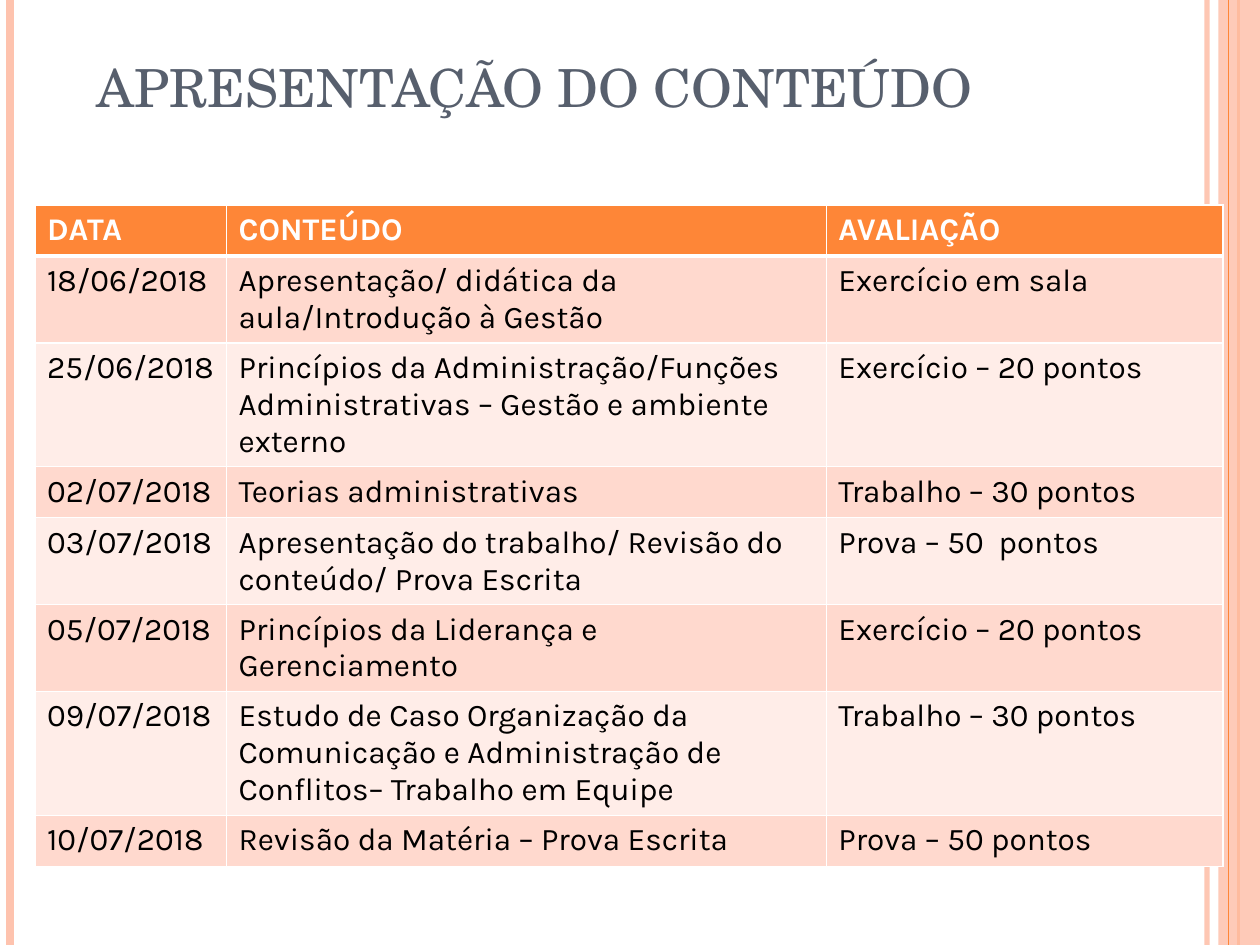
from lxml.etree import SubElement
from pptx import Presentation
from pptx.dml.color import RGBColor
from pptx.enum.shapes import MSO_CONNECTOR, MSO_SHAPE
from pptx.enum.text import MSO_ANCHOR, MSO_AUTO_SIZE, PP_ALIGN
from pptx.oxml import parse_xml
from pptx.oxml.ns import nsdecls, qn
from pptx.util import Cm, Pt

COLORS = {
    "orange": "FE8637", "peach": "FEC3AE", "slate": "575F6D",
    "band": "FFD9CE", "light": "FFEDE8", "white": "FFFFFF", "black": "000000",
}
HEADER = ("DATA", "CONTEÚDO", "AVALIAÇÃO")
LESSONS = [
    ("18/06/2018", "Apresentação/ didática da aula/Introdução à Gestão", "Exercício em sala"),
    ("25/06/2018", "Princípios da Administração/Funções Administrativas – Gestão e ambiente externo",
     "Exercício – 20 pontos"),
    ("02/07/2018", "Teorias administrativas", "Trabalho – 30 pontos"),
    ("03/07/2018", "Apresentação do trabalho/ Revisão do conteúdo/ Prova Escrita", "Prova – 50  pontos"),
    ("05/07/2018", "Princípios da Liderança e Gerenciamento", "Exercício – 20 pontos"),
    ("09/07/2018", "Estudo de Caso Organização da Comunicação e Administração de Conflitos– Trabalho em Equipe",
     "Trabalho – 30 pontos"),
    ("10/07/2018", "Revisão da Matéria – Prova Escrita", "Prova – 50 pontos"),
]


def rgb(name):
    """Return the named palette colour."""
    return RGBColor.from_string(COLORS[name])


def set_alpha(sp, percent):
    """Make the first solid colour of a shape translucent."""
    color = next(sp._element.spPr.iter(qn("a:srgbClr")))
    SubElement(color, qn("a:alpha"), val=str(percent * 1000))


def style_font(p, name, size, color, bold=False):
    """Set the font of a paragraph."""
    p.font.name, p.font.size, p.font.bold = name, Pt(size), bold
    p.font.color.rgb = rgb(color)


def add_rule(s, x, height, color, width):
    """Draw a full-height vertical rule."""
    line = s.shapes.add_connector(MSO_CONNECTOR.STRAIGHT, x, 0, x, height)
    line.line.color.rgb = rgb(color)
    line.line.width = Pt(width)
    SubElement(line._element.spPr, qn("a:effectLst"))
    return line


def add_side_bands(s, width, height):
    """Draw the rules and the translucent band along both slide edges."""
    set_alpha(add_rule(s, width - Cm(1.07), height, "peach", 3), 93)
    add_rule(s, Cm(0.2), height, "peach", 4.5)
    add_rule(s, width - Cm(0.43), height, "orange", 1.5)
    band_width = Cm(0.84)
    sp = s.shapes.add_shape(MSO_SHAPE.RECTANGLE, width - band_width, 0, band_width, height)
    sp.shadow.inherit = False
    sp.fill.solid()
    sp.fill.fore_color.rgb = rgb("peach")
    sp.line.fill.background()
    set_alpha(sp, 87)
    add_rule(s, width - Cm(0.64), height, "orange", 0.75)


def add_title(s, left, top, width, height):
    """Place and format the title placeholder."""
    title = s.shapes.title
    title.left, title.top, title.width, title.height = left, top, width, height
    tf = title.text_frame
    tf.text = "APRESENTAÇÃO DO CONTEÚDO"
    tf.auto_size = MSO_AUTO_SIZE.NONE
    tf.vertical_anchor = MSO_ANCHOR.BOTTOM
    p = tf.paragraphs[0]
    p.alignment = PP_ALIGN.LEFT
    style_font(p, "TeX Gyre Schola", 30, "slate")


def set_borders(cell, bottom):
    """Give a cell white borders, with its own bottom width in points."""
    tc_pr = cell._tc.get_or_add_tcPr()
    for i, (side, width) in enumerate((("L", 1), ("R", 1), ("T", 1), ("B", bottom))):
        tc_pr.insert(i, parse_xml(
            f'<a:ln{side} {nsdecls("a")} w="{Pt(width)}"><a:solidFill>'
            f'<a:srgbClr val="{COLORS["white"]}"/></a:solidFill></a:ln{side}>'))


def fill_cell(cell, text, fill, color, header):
    """Write and format one schedule cell."""
    cell.text = text
    cell.margin_left = cell.margin_right = Cm(0.24)
    cell.margin_top = cell.margin_bottom = Cm(0.13)
    cell.fill.solid()
    cell.fill.fore_color.rgb = rgb(fill)
    style_font(cell.text_frame.paragraphs[0], "Karla", 18, color, header)
    set_borders(cell, 3 if header else 1)


def add_schedule(s, left, top, width, height):
    """Build the banded lesson schedule."""
    rows = [HEADER, *LESSONS]
    frame = s.shapes.add_table(len(rows), len(HEADER), left, top, width, height)
    table = frame.table
    date_width, topic_width = Cm(3.86), Cm(12.09)
    widths = (date_width, topic_width, width - date_width - topic_width)
    for column, column_width in zip(table.columns, widths):
        column.width = column_width
    for i, texts in enumerate(rows):
        table.rows[i].height = Cm(1.03)
        header = i == 0
        fill = "orange" if header else ("band" if i % 2 else "light")
        for j, text in enumerate(texts):
            fill_cell(table.cell(i, j), text, fill, "white" if header else "black", header)
    frame.height = height


def main():
    """Build and save the slide."""
    prs = Presentation()
    prs.slide_width, prs.slide_height = Cm(25.4), Cm(19.05)
    s = prs.slides.add_slide(prs.slide_layouts[5])
    add_side_bands(s, prs.slide_width, prs.slide_height)
    add_title(s, Cm(1.7), Cm(0), Cm(20.75), Cm(2.51))
    add_schedule(s, Cm(0.71), Cm(4.13), Cm(23.94), Cm(13.51))
    prs.save("out.pptx")


if __name__ == "__main__":
    main()
